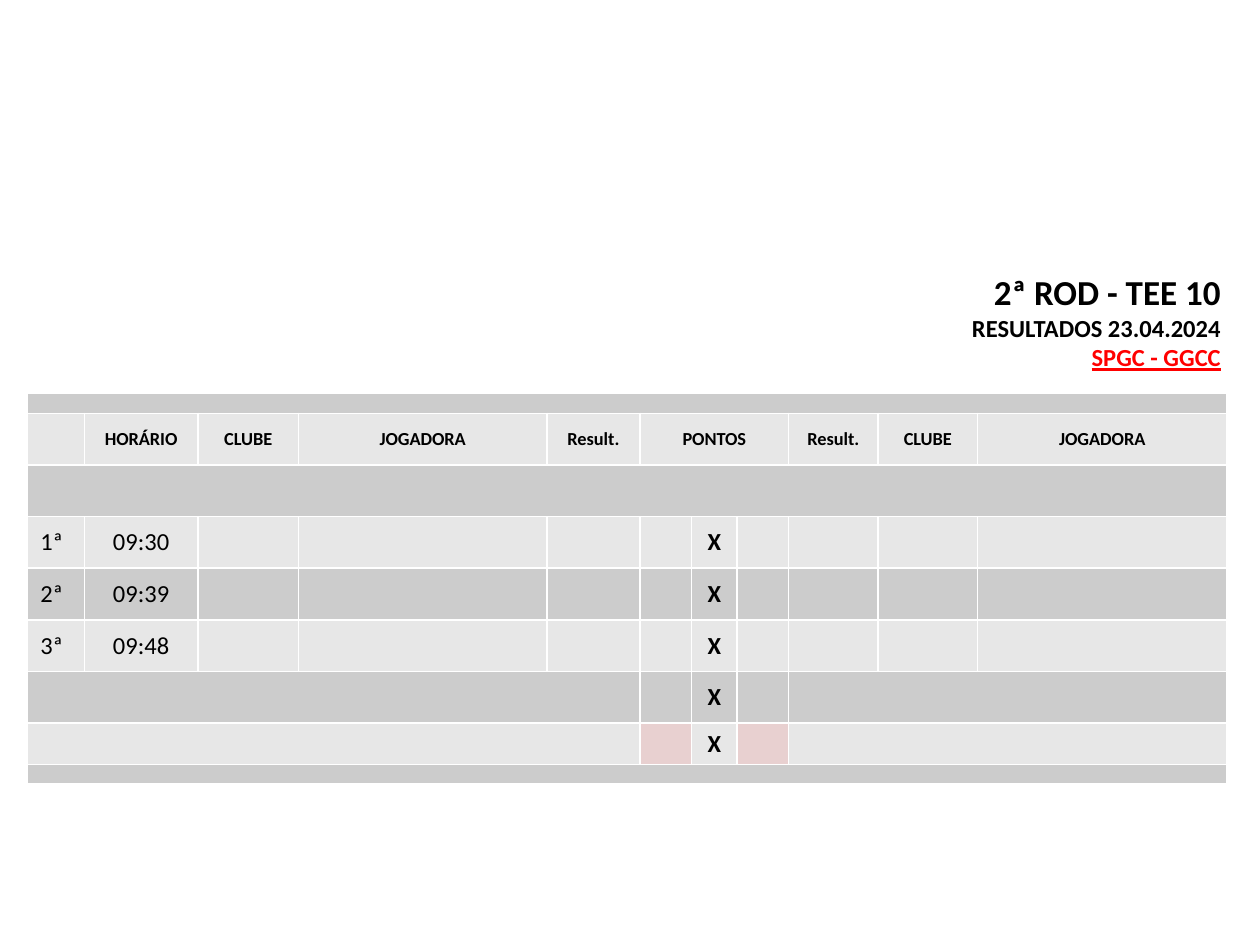
"""Builds the tee-time results slide with its score table."""
from lxml.etree import SubElement
from pptx import Presentation
from pptx.dml.color import RGBColor as RGB
from pptx.enum.text import MSO_ANCHOR as Anchor, MSO_AUTO_SIZE as Auto, PP_ALIGN as Align
from pptx.oxml import parse_xml
from pptx.oxml.ns import qn
from pptx.util import Inches, Pt

BLACK = RGB(0, 0, 0)
RED = RGB(0xFF, 0, 0)
DARK = RGB(0xCC, 0xCC, 0xCC)
LIGHT = RGB(0xE7, 0xE7, 0xE7)
PINK = RGB(0xE8, 0xD0, 0xD0)
NS = "http://schemas.openxmlformats.org/drawingml/2006/main"


def write(para, text, size=14, color=BLACK, bold=True, line=None, align=Align.CENTER):
    """Add one formatted run to a paragraph."""
    para.alignment = align
    run = para.add_run()
    run.text = text
    font = run.font
    font.name, font.size, font.bold = "Calibri", Pt(size), bold
    font.underline = line
    font.color.rgb = color


deck = Presentation()
deck.slide_width, deck.slide_height = Inches(10), Inches(7.5)
slide = deck.slides.add_slide(deck.slide_layouts[5])

title = slide.shapes.title
title.left, title.top = Inches(0.72), Inches(2.1)
title.width, title.height = Inches(9.07), Inches(1.09)
frame = title.text_frame
frame.word_wrap, frame.auto_size = True, Auto.NONE
frame.vertical_anchor = Anchor.TOP
head = frame.paragraphs[0]
write(head, "2ª ROD - TEE 10", size=20, align=Align.RIGHT)
head.add_line_break()
write(head, "RESULTADOS 23.04.2024", align=Align.RIGHT)
write(frame.add_paragraph(), "SPGC - GGCC", color=RED, line=True, align=Align.RIGHT)

widths = [0.45, 0.9, 0.8, 1.97, 0.74, 0.41, 0.36, 0.41, 0.71, 0.79, 1.98]
heights = [0.16] + [0.41] * 6 + [0.33, 0.15]
shape = slide.shapes.add_table(
    len(heights), len(widths), Inches(0.22), Inches(3.12),
    Inches(sum(widths)), Inches(sum(heights)))
table = shape.table
table.first_row = table.horz_banding = False
for col, width in zip(table.columns, widths):
    col.width = Inches(width)
for row, height in zip(table.rows, heights):
    row.height = Inches(height)

labels = ["", "HORÁRIO", "CLUBE", "JOGADORA", "Result.", "PONTOS", "", "",
          "Result.", "CLUBE", "JOGADORA"]
texts = {(1, c): label for c, label in enumerate(labels)}
for r, time in enumerate(["09:30", "09:39", "09:48"], 3):
    texts[r, 0], texts[r, 1] = f"{r - 2}ª", time
for r in range(3, 8):
    texts[r, 6] = "X"

for r in range(len(heights)):
    for c in range(len(widths)):
        cell = table.cell(r, c)
        cell.vertical_anchor = Anchor.MIDDLE
        cell.margin_top = cell.margin_bottom = 0
        cell.fill.solid()
        pink = r == 7 and c in (5, 7)
        cell.fill.fore_color.rgb = PINK if pink else LIGHT if r % 2 else DARK
        for i, side in enumerate(["lnL", "lnR", "lnT", "lnB"]):
            cell._tc.tcPr.insert(i, parse_xml(
                f'<a:{side} xmlns:a="{NS}" w="12700"><a:solidFill>'
                f'<a:srgbClr val="FFFFFF"/></a:solidFill></a:{side}>'))
        para = cell.text_frame.paragraphs[0]
        text = texts.get((r, c))
        if text:
            write(para, text, size=10.5 if r == 1 else 14,
                  bold=r == 1 or c == 6,
                  align=Align.LEFT if c == 0 else Align.CENTER)
        else:
            SubElement(para._p, qn("a:endParaRPr"), sz="500")

spans = [(r, 0, 10) for r in (0, 2, 8)] + [(1, 5, 7)]
spans += [(r, a, b) for r in (6, 7) for a, b in ((0, 4), (8, 10))]
for r, a, b in spans:
    table.cell(r, a).merge(table.cell(r, b))

deck.save("out.pptx")
